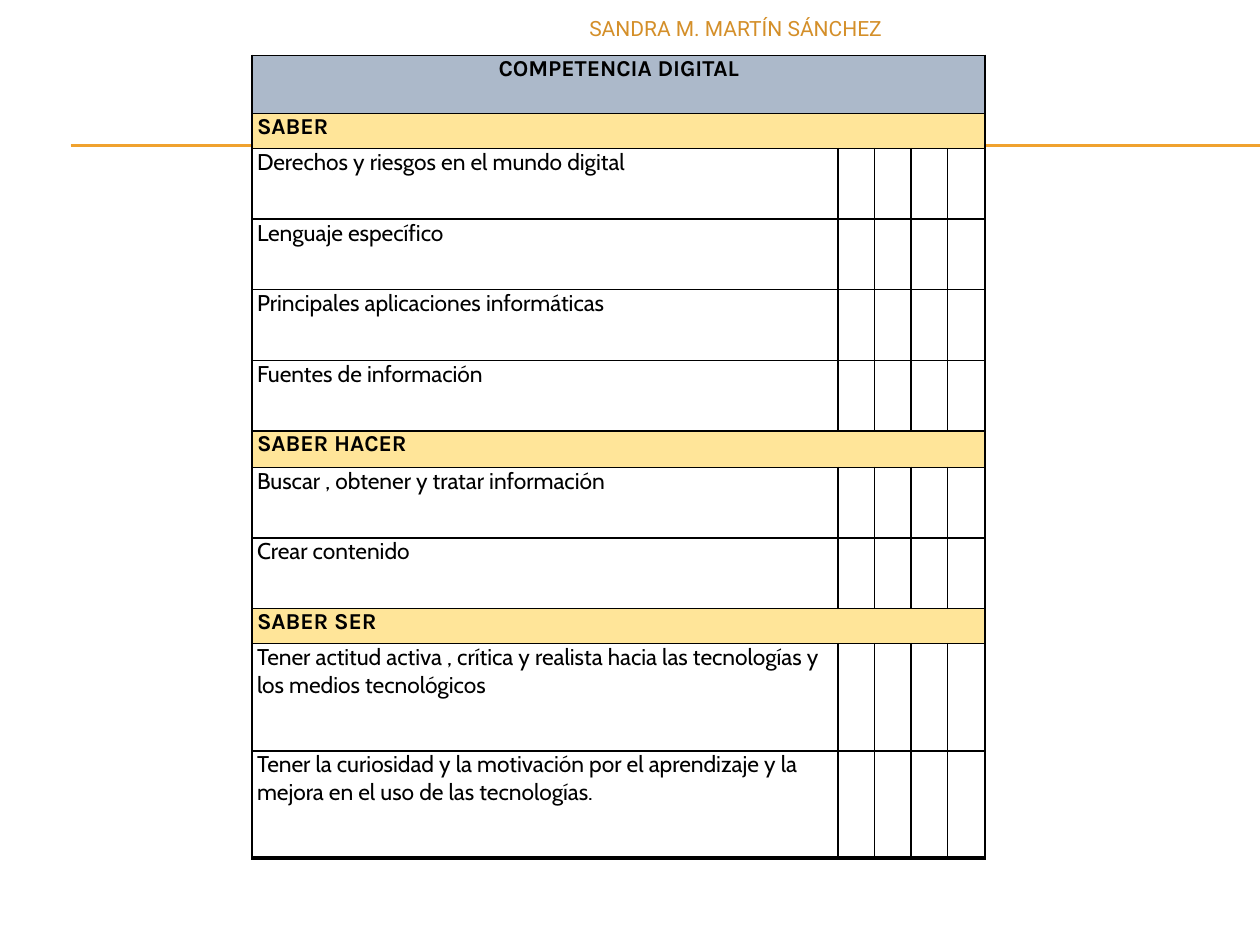
"""Build the digital competence checklist slide."""
from dataclasses import dataclass
from typing import Optional

import lxml.etree
import pptx
import pptx.dml.color
import pptx.enum.shapes
import pptx.enum.text
import pptx.oxml.ns
import pptx.util

SLIDE_W, SLIDE_H = 10, 7.5
BLACK, ORANGE, OCHRE = "000000", "F0A22E", "D48F29"
BLUE_GREY, YELLOW = "ACB9CA", "FFE599"
LEFT = pptx.enum.text.PP_ALIGN.LEFT
CENTER = pptx.enum.text.PP_ALIGN.CENTER
RIGHT = pptx.enum.text.PP_ALIGN.RIGHT
COL_WIDTHS = [4.65, 0.29, 0.29, 0.29, 0.3]


@dataclass(frozen=True)
class Row:
    text: str
    height: float = 0.56
    fill: Optional[str] = None
    align: int = LEFT


ROWS = [
    Row("COMPETENCIA DIGITAL", 0.46, BLUE_GREY, CENTER),
    Row("SABER", 0.28, YELLOW),
    Row("Derechos y riesgos en el mundo digital"),
    Row("Lenguaje específico"),
    Row("Principales aplicaciones informáticas"),
    Row("Fuentes de información"),
    Row("SABER HACER", 0.29, YELLOW),
    Row("Buscar , obtener y tratar información"),
    Row("Crear contenido"),
    Row("SABER SER", 0.28, YELLOW),
    Row("Tener actitud activa , crítica y realista hacia las tecnologías "
        "y los medios tecnológicos", 0.85),
    Row("Tener la curiosidad y la motivación por el aprendizaje y la mejora "
        "en el uso de las tecnologías.", 0.85),
]


def rgb(color: str) -> pptx.dml.color.RGBColor:
    """Turn a hex string into a colour."""
    return pptx.dml.color.RGBColor.from_string(color)


def across(share: float) -> int:
    """Turn a share of the slide width into a length."""
    return pptx.util.Inches(share * SLIDE_W)


def down(share: float) -> int:
    """Turn a share of the slide height into a length."""
    return pptx.util.Inches(share * SLIDE_H)


def write(tf, text: str, *, font: str, size: float, color: str = BLACK,
          bold: bool = False, align: int = LEFT, after: float = 0) -> None:
    """Write one formatted paragraph into a text frame."""
    tf.word_wrap = True
    p = tf.paragraphs[0]
    p.alignment, p.space_after = align, pptx.util.Pt(after)
    r = p.add_run()
    r.text = text
    r.font.name, r.font.size, r.font.bold = font, pptx.util.Pt(size), bold
    r.font.color.rgb = rgb(color)


def add_rule(s, left: float, right: float, y: float) -> None:
    """Draw a thin horizontal rule between two shares of the width."""
    line = s.shapes.add_connector(pptx.enum.shapes.MSO_CONNECTOR.STRAIGHT,
                                  across(left), down(y), across(right), down(y))
    line.line.color.rgb = rgb(ORANGE)
    line.line.width = pptx.util.Pt(0.75)
    lxml.etree.SubElement(line._element.spPr, pptx.oxml.ns.qn("a:effectLst"))


def set_borders(cell, bottom: float) -> None:
    """Give a cell black borders, with its own bottom width in points."""
    qn = pptx.oxml.ns.qn
    tc_pr = cell._tc.get_or_add_tcPr()
    for side, width in {"L": 1, "R": 1, "T": 1, "B": bottom}.items():
        ln = lxml.etree.SubElement(tc_pr, qn(f"a:ln{side}"), w=str(pptx.util.Pt(width)))
        fill = lxml.etree.SubElement(ln, qn("a:solidFill"))
        lxml.etree.SubElement(fill, qn("a:srgbClr"), val=BLACK)


def format_cell(cell, fill: Optional[str], bottom: float) -> None:
    """Set the insets, borders and fill of a cell."""
    cell.margin_left = cell.margin_right = pptx.util.Inches(0.04)
    cell.margin_top = cell.margin_bottom = 0
    set_borders(cell, bottom)
    if fill:
        cell.fill.solid()
        cell.fill.fore_color.rgb = rgb(fill)
    else:
        cell.fill.background()


def add_checklist(s, left: float, top: float, rows: list[Row]) -> None:
    """Draw the checklist, with filled rows merged into banners."""
    frame = s.shapes.add_table(len(rows), len(COL_WIDTHS), across(left), down(top),
                               pptx.util.Inches(sum(COL_WIDTHS)),
                               pptx.util.Inches(sum(row.height for row in rows)))
    table = frame.table
    table.first_row = table.horz_banding = False
    for col, width in zip(table.columns, COL_WIDTHS):
        col.width = pptx.util.Inches(width)
    for i, row in enumerate(rows):
        table.rows[i].height = pptx.util.Inches(row.height)
        bottom = 2.25 if i == len(rows) - 1 else 1
        for cell in table.rows[i].cells:
            format_cell(cell, row.fill, bottom)
        first = table.cell(i, 0)
        if row.fill:
            first.merge(table.cell(i, len(COL_WIDTHS) - 1))
        write(first.text_frame, row.text, font="Karla" if row.fill else "Cabin",
              size=13, bold=bool(row.fill), align=row.align, after=8)


def main() -> None:
    """Build and save the slide."""
    prs = pptx.Presentation()
    prs.slide_width, prs.slide_height = across(1), down(1)
    s = prs.slides.add_slide(prs.slide_layouts[6])
    for y in (1.15, 1.16):
        add_rule(s, 0.056, 1, y / SLIDE_H)
    add_checklist(s, 0.2, 0.44 / SLIDE_H, ROWS)
    author = s.shapes.add_textbox(across(0.39), down(0.01), across(0.32), down(0.04))
    write(author.text_frame, "SANDRA M. MARTÍN SÁNCHEZ", font="Roboto", size=12,
          color=OCHRE, align=RIGHT)
    prs.save("out.pptx")


if __name__ == "__main__":
    main()
